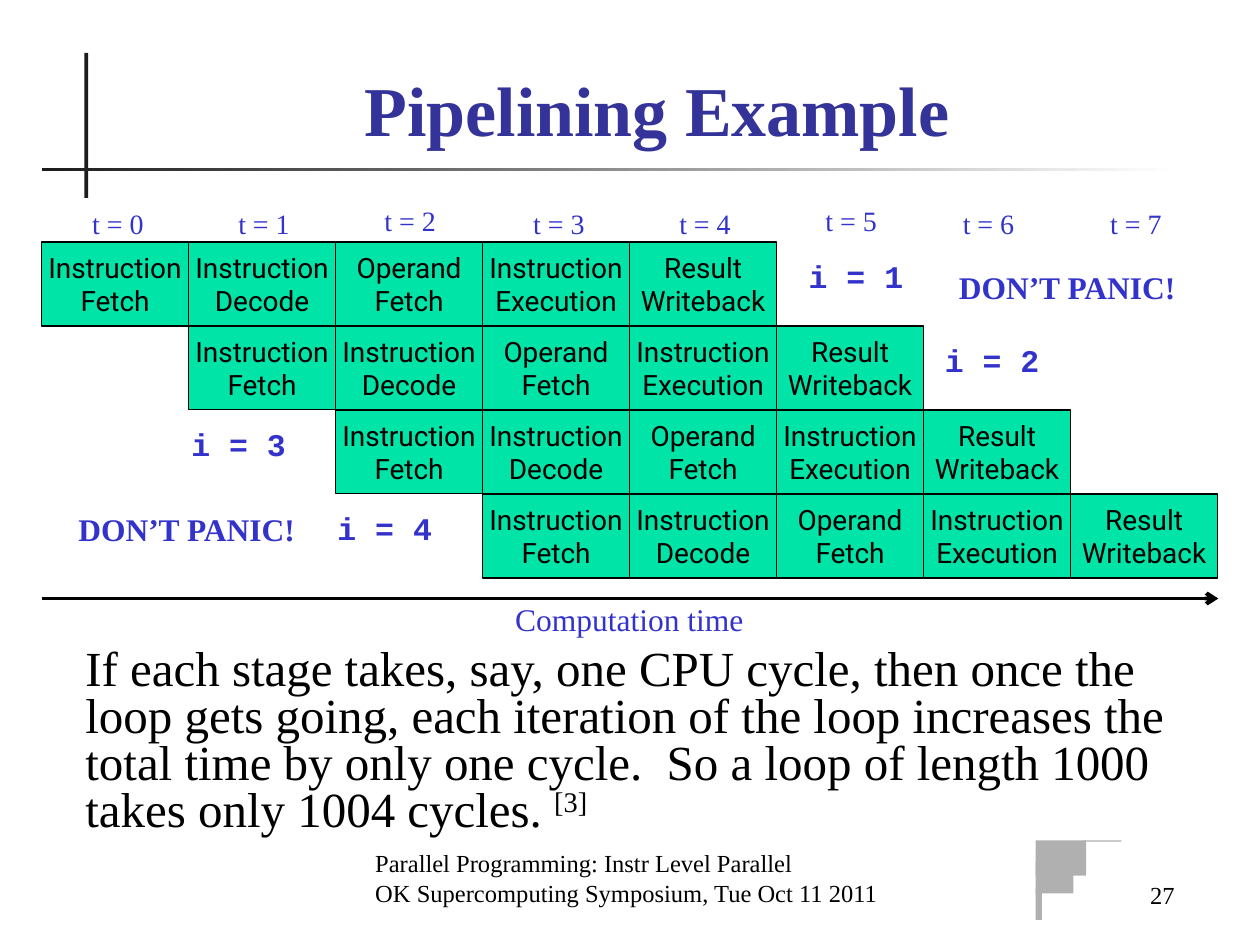
from dataclasses import dataclass

from lxml.etree import SubElement
from pptx import Presentation
from pptx.dml.color import RGBColor
from pptx.enum.shapes import MSO_CONNECTOR as Connector, MSO_SHAPE as Shape
from pptx.enum.text import MSO_ANCHOR as Anchor, PP_ALIGN as Align
from pptx.oxml.ns import qn
from pptx.util import Inches, Pt

COLORS = {
    "ink": "000000", "rule": "1C1C1C", "paper": "FFFFFF", "ornament": "B0B0B0",
    "title": "333399", "label": "3333CC", "stage": "00E4A8",
}
SERIF, MONO, SANS = "Times New Roman", "Courier New", "Roboto"
STAGES = ["Instruction\nFetch", "Instruction\nDecode", "Operand\nFetch",
          "Instruction\nExecution", "Result\nWriteback"]
ITERATIONS = 4
GRID_LEFT, GRID_TOP = 0.33, 1.92
CELL_WIDTH, CELL_HEIGHT = 7 / 6, 2 / 3


@dataclass
class Bar:
    left: float
    top: float
    width: float
    height: float
    color: str = "ornament"


@dataclass
class Label:
    text: str
    left: float
    top: float
    width: float
    height: float
    size: int = 18
    color: str = "label"
    font: str = SERIF
    bold: bool = False
    align: Align = Align.CENTER
    anchor: Anchor = Anchor.TOP
    wrap: bool = False


BARS = [
    Bar(0.67, 0.42, 0.03, 1.15, "rule"),
    Bar(8.22, 6.67, 0.4, 0.28),
    Bar(8.22, 6.84, 0.3, 0.25),
    Bar(8.22, 7.05, 0.05, 0.25),
    Bar(8.6, 6.67, 0.3, 0.01),
]
TIME_SPOTS = [(0.63, 1.59), (1.79, 1.59), (2.95, 1.57), (4.13, 1.59),
              (5.29, 1.59), (6.45, 1.57), (7.54, 1.59), (8.71, 1.59)]
ITERATION_LEFTS = [6.32, 7.4, 1.42, 2.58]
LABELS = [
    Label("Pipelining Example", 0.83, 0.5, 8.77, 0.74, 40, "title", bold=True,
          anchor=Anchor.BOTTOM, wrap=True),
    Label("Parallel Programming: Instr Level Parallel\n"
          "OK Supercomputing Symposium, Tue Oct 11 2011",
          2.88, 6.75, 4.37, 0.5, 14, "ink", align=Align.LEFT,
          anchor=Anchor.BOTTOM, wrap=True),
    Label("27", 8, 6.77, 1.42, 0.5, 14, "ink", align=Align.RIGHT,
          anchor=Anchor.BOTTOM, wrap=True),
    Label("Computation time", 3.69, 4.71, 2.61, 0.5),
    Label("DON’T PANIC!", 0.5, 4, 1.94, 0.4, bold=True, align=Align.RIGHT),
    Label("DON’T PANIC!", 7.5, 2.08, 1.94, 0.4, bold=True),
    *[Label(f"t = {step}", left, top, 0.61, 0.37, 16)
      for step, (left, top) in enumerate(TIME_SPOTS)],
    *[Label(f"i = {row + 1}", left, 1.99 + row * CELL_HEIGHT, 1.2, 0.5,
            font=MONO, bold=True, align=Align.LEFT)
      for row, left in enumerate(ITERATION_LEFTS)],
]
BODY = Label(
    "If each stage takes, say, one CPU cycle, then once the loop gets going, "
    "each iteration of the loop increases the total time by only one cycle.  "
    "So a loop of length 1000 takes only 1004 cycles. ",
    0.58, 5.1, 8.83, 1.59, 28, "ink", align=Align.LEFT, wrap=True)


def rgb(name: str) -> RGBColor:
    """Look up a named colour."""
    return RGBColor.from_string(COLORS[name])


def add_bar(page, bar: Bar):
    """Draw a plain filled rectangle."""
    box = page.shapes.add_shape(Shape.RECTANGLE, Inches(bar.left), Inches(bar.top),
                                Inches(bar.width), Inches(bar.height))
    box.shadow.inherit = False
    box.fill.solid()
    box.fill.fore_color.rgb = rgb(bar.color)
    box.line.fill.background()
    return box


def write(box, label: Label) -> None:
    """Fill a shape with the styled text of a label."""
    frame = box.text_frame
    frame.text = label.text
    frame.word_wrap = label.wrap
    frame.vertical_anchor = label.anchor
    for para in frame.paragraphs:
        para.alignment = label.align
        para.font.name = label.font
        para.font.size = Pt(label.size)
        para.font.bold = label.bold
        para.font.color.rgb = rgb(label.color)


def add_label(page, label: Label):
    """Place a label in its own text box."""
    box = page.shapes.add_textbox(Inches(label.left), Inches(label.top),
                                  Inches(label.width), Inches(label.height))
    write(box, label)
    return box


def add_title_rule(page) -> None:
    """Draw the horizontal rule that fades to the right."""
    rule = add_bar(page, Bar(0.33, 1.33, 9, 0.03, "rule"))
    rule.fill.gradient()
    rule.fill.gradient_angle = 0
    for stop, name in zip(rule.fill.gradient_stops, ("rule", "paper")):
        stop.color.rgb = rgb(name)


def add_stage(page, text: str, row: int, column: int) -> None:
    """Draw one pipeline stage in its grid cell."""
    cell = Bar(GRID_LEFT + column * CELL_WIDTH, GRID_TOP + row * CELL_HEIGHT,
               CELL_WIDTH, CELL_HEIGHT, "stage")
    box = add_bar(page, cell)
    box.line.color.rgb = rgb("ink")
    box.line.width = Pt(0.75)
    write(box, Label(text, cell.left, cell.top, cell.width, cell.height, 16, "ink",
                     SANS, anchor=Anchor.MIDDLE))


def add_time_arrow(page) -> None:
    """Draw the arrow of computation time below the grid."""
    arrow = page.shapes.add_connector(Connector.STRAIGHT, Inches(0.33), Inches(4.75),
                                      Inches(9.67), Inches(4.75))
    arrow.line.color.rgb = rgb("ink")
    arrow.line.width = Pt(2.25)
    SubElement(arrow.line._get_or_add_ln(), qn("a:tailEnd"), type="arrow")
    SubElement(arrow._element.spPr, qn("a:effectLst"))


def add_body(page) -> None:
    """Write the closing statement with its raised citation."""
    para = add_label(page, BODY).text_frame.paragraphs[0]
    para.line_spacing = 0.8
    span = para.add_run()
    span.text = "[3]"
    span.font._element.set("baseline", "30000")


def main() -> None:
    """Build the pipelining slide."""
    deck = Presentation()
    deck.slide_width, deck.slide_height = Inches(10), Inches(7.5)
    page = deck.slides.add_slide(deck.slide_layouts[6])
    for bar in BARS:
        add_bar(page, bar)
    add_title_rule(page)
    for row in range(ITERATIONS):
        for offset, text in enumerate(STAGES):
            add_stage(page, text, row, row + offset)
    add_time_arrow(page)
    for label in LABELS:
        add_label(page, label)
    add_body(page)
    deck.save("out.pptx")


if __name__ == "__main__":
    main()
